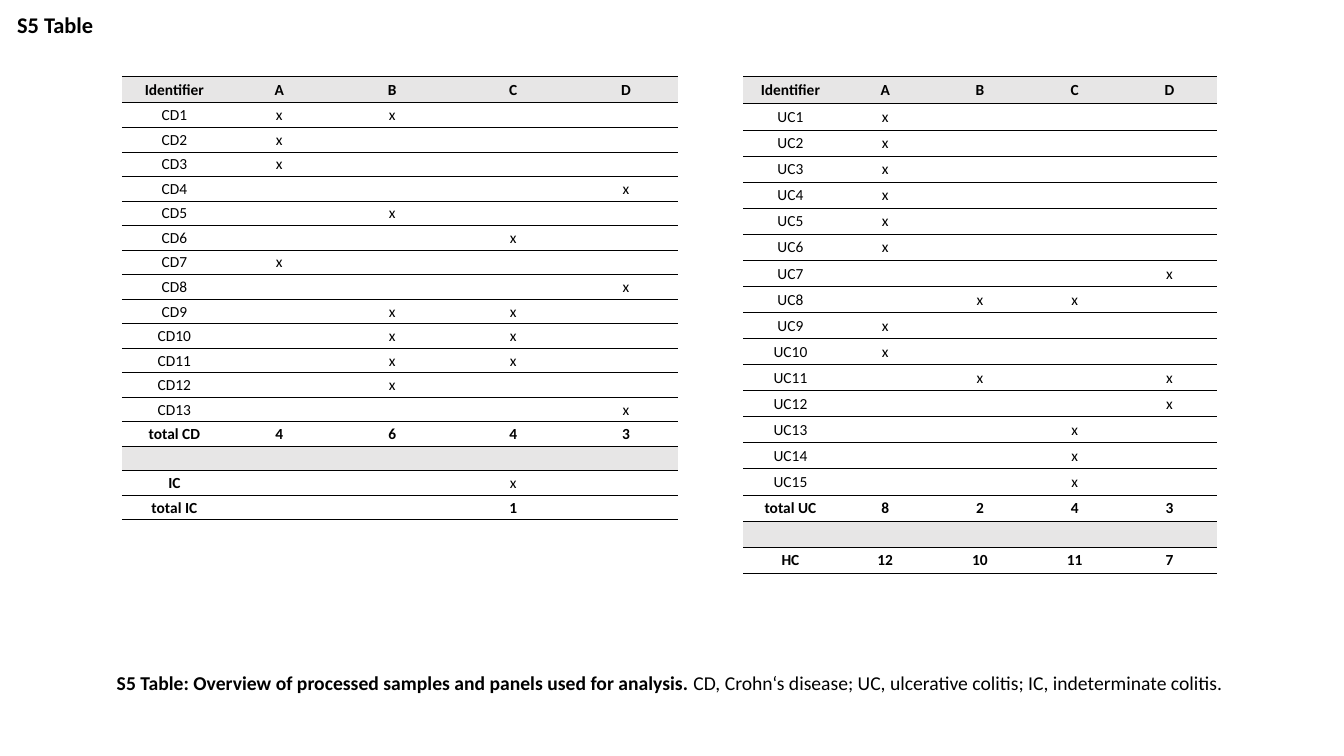
from lxml import etree
from pptx import Presentation
from pptx.dml import color
from pptx.enum import text
from pptx.oxml import ns
from pptx.util import Inches, Pt

FONT, BLACK, GREY = "Calibri", "000000", "E7E6E6"
PLAIN_TABLE = "{2D5ABB26-0587-4C30-8999-92F81FD0307C}"
PANELS = "ABCD"

TITLE = "S5 Table"
CAPTION = [
    ("S5 Table: Overview of processed samples and panels used for analysis. ", True),
    ("CD, Crohn‘s disease; UC, ulcerative colitis; IC, indeterminate colitis.", False),
]

# Panels in which each numbered sample was used
UC_SAMPLES = ["A", "A", "A", "A", "A", "A", "D", "BC", "A", "A",
              "BD", "D", "C", "C", "C"]
CD_SAMPLES = ["AB", "A", "A", "D", "B", "C", "A", "D", "BC", "BC", "BC", "B", "D"]

HEADER = ["Identifier", *PANELS]
SPACER = [""] * 5


def marks(panels):
    return ["x" if panel in panels else "" for panel in PANELS]


def sample_rows(prefix, samples):
    return [[f"{prefix}{n}", *marks(used)] for n, used in enumerate(samples, 1)]


TABLES = [
    dict(left=7.37, height=4.93, header_height=0.27, columns=[0.94] * 5, header_line=0.5,
         rows=[HEADER, *sample_rows("UC", UC_SAMPLES),
               ["total UC", "8", "2", "4", "3"], SPACER,
               ["HC", "12", "10", "11", "7"]]),
    dict(left=1.21, height=4.4, header_height=0.26, columns=[1.04, 1.04, 1.2, 1.2, 1.04],
         header_line=1,
         rows=[HEADER, *sample_rows("CD", CD_SAMPLES),
               ["total CD", "4", "6", "4", "3"], SPACER,
               ["IC", *marks("C")], ["total IC", "", "", "1", ""]]),
]
TABLE_TOP = 0.76


def rgb(value):
    return color.RGBColor.from_string(value)


def style(font, size, bold=None):
    font.name, font.size, font.bold = FONT, Pt(size), bold
    font.color.rgb = rgb(BLACK)


def add_rule(cell, side, width, position):
    """Draw one horizontal cell border; position keeps the schema order."""
    line = etree.Element(ns.qn(f"a:{side}"), w=str(Pt(width)))
    fill = etree.SubElement(line, ns.qn("a:solidFill"))
    etree.SubElement(fill, ns.qn("a:srgbClr"), val=BLACK)
    cell._tc.get_or_add_tcPr().insert(position, line)


def fill_cell(cell, value, bold, shaded, top_width, bottom_width):
    cell.margin_left = cell.margin_right = cell.margin_top = Inches(0.01)
    cell.margin_bottom = 0
    cell.vertical_anchor = text.MSO_ANCHOR.MIDDLE
    para = cell.text_frame.paragraphs[0]
    para.alignment = text.PP_ALIGN.CENTER
    style(para.font, 11, bold)
    if value:
        para.add_run().text = value
    else:  # keeps empty cells from stretching their row
        etree.SubElement(para._p, ns.qn("a:endParaRPr"), sz="1100")
    if shaded:
        cell.fill.solid()
        cell.fill.fore_color.rgb = rgb(GREY)
    else:
        cell.fill.background()
    add_rule(cell, "lnT", top_width, 0)
    add_rule(cell, "lnB", bottom_width, 1)


def add_sample_table(slide, left, height, header_height, columns, header_line, rows):
    frame = slide.shapes.add_table(len(rows), len(columns), Inches(left), Inches(TABLE_TOP),
                                   Inches(sum(columns)), Inches(height))
    table = frame.table
    table.first_row = table.horz_banding = False
    table._tbl.tblPr[0].text = PLAIN_TABLE
    for column, width in zip(table.columns, columns):
        column.width = Inches(width)
    row_height = (height - header_height) / (len(rows) - 1)
    for r, values in enumerate(rows):
        table.rows[r].height = Inches(row_height if r else header_height)
        shaded = values in (HEADER, SPACER)
        summary = shaded or values[0].startswith("total") or values[0] in ("IC", "HC")
        for c, value in enumerate(values):
            fill_cell(table.cell(r, c), value, summary and value != "x", shaded,
                      header_line if r == 1 else 0.5, header_line if r == 0 else 0.5)


deck = Presentation()
deck.slide_width, deck.slide_height = Inches(13.33), Inches(7.5)
page = deck.slides.add_slide(deck.slide_layouts[5])

# Title
title = page.shapes.title
title.left, title.top, title.width, title.height = map(Inches, (0.07, 0.12, 6.2, 0.28))
title.text_frame.text = TITLE
title.text_frame.auto_size = text.MSO_AUTO_SIZE.NONE
title.text_frame.vertical_anchor = text.MSO_ANCHOR.MIDDLE
para = title.text_frame.paragraphs[0]
para.alignment = text.PP_ALIGN.LEFT
para.line_spacing = 0.9
style(para.font, 16, True)

# Caption
box = page.shapes.add_textbox(*map(Inches, (1.06, 6.61, 11.46, 0.34)))
box.text_frame.word_wrap = True
box.text_frame.auto_size = text.MSO_AUTO_SIZE.SHAPE_TO_FIT_TEXT
para = box.text_frame.paragraphs[0]
para.alignment = text.PP_ALIGN.JUSTIFY
para.space_before, para.space_after = Pt(6), Pt(12)
style(para.font, 14)
for words, bold in CAPTION:
    span = para.add_run()
    span.text, span.font.bold = words, bold

# Sample tables
for sample_table in TABLES:
    add_sample_table(page, **sample_table)

deck.save("out.pptx")
